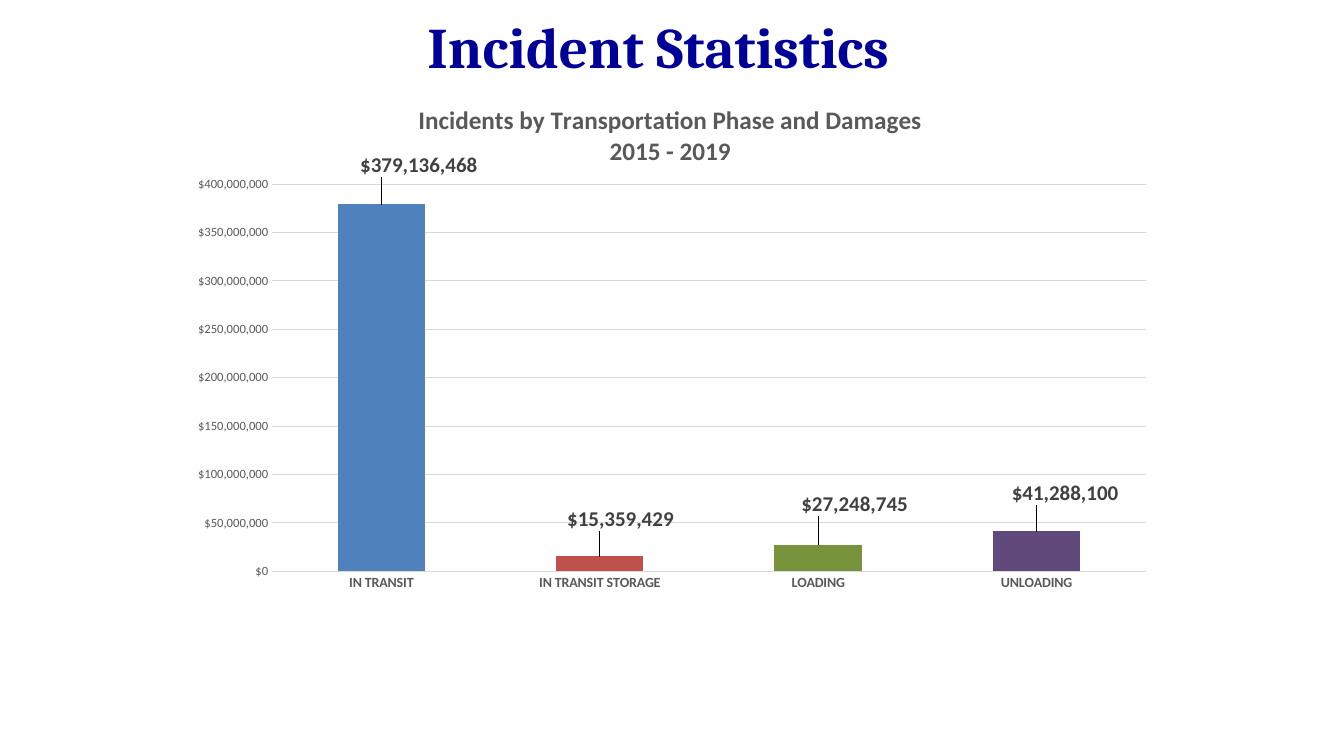
"""Build the incident statistics slide with its damages column chart."""
import pptx
import pptx.chart.data
import pptx.dml.color
import pptx.enum.chart
import pptx.enum.text
import pptx.oxml
import pptx.oxml.ns
import pptx.util

COLORS = {"heading": "000099", "muted": "595959", "label": "404040", "grid": "D9D9D9"}
DOLLARS = '"$"#,##0'
PHASES = [
    ("IN TRANSIT", 379136468, "4F81BD", 0.038, -0.044),
    ("IN TRANSIT STORAGE", 15359429, "C0504D", 0.021, -0.04),
    ("LOADING", 27248745, "77933C", 0.037, -0.046),
    ("UNLOADING", 41288100, "604A7B", 0.029, -0.042),
]


def write(frame, text, font="Calibri", size=18, color="muted"):
    for number, line in enumerate(text.split("\n")):
        paragraph = frame.add_paragraph() if number else frame.paragraphs[0]
        paragraph.alignment = pptx.enum.text.PP_ALIGN.CENTER
        run = paragraph.add_run()
        run.text = line
        run.font.name, run.font.size, run.font.bold = font, pptx.util.Pt(size), True
        run.font.color.rgb = pptx.dml.color.RGBColor.from_string(COLORS[color])


def place(part, index, **settings):
    for old in part.findall(pptx.oxml.ns.qn("c:layout")):
        part.remove(old)
    values = "".join(f'<c:{key} val="{value}"/>' for key, value in settings.items())
    part.insert(index, pptx.oxml.parse_xml(
        f'<c:layout {pptx.oxml.ns.nsdecls("c")}><c:manualLayout>{values}</c:manualLayout></c:layout>'))


presentation = pptx.Presentation()
presentation.slide_width = pptx.util.Inches(13.33)
presentation.slide_height = pptx.util.Inches(7.5)
slide = presentation.slides.add_slide(presentation.slide_layouts[6])

heading_area = [pptx.util.Inches(length) for length in (2.03, 0.11, 9, 1.25)]
heading = slide.shapes.add_textbox(*heading_area).text_frame
heading.word_wrap = True
heading.margin_top = 0
heading.vertical_anchor = pptx.enum.text.MSO_ANCHOR.TOP
write(heading, "Incident Statistics", font="Cambria", size=41, color="heading")

damages = pptx.chart.data.CategoryChartData(number_format=DOLLARS)
damages.categories = [phase[0] for phase in PHASES]
damages.add_series("Series 1", [phase[1] for phase in PHASES])
chart_area = [pptx.util.Inches(length) for length in (1.77, 0.79, 9.79, 5.19)]
chart = slide.shapes.add_chart(
    pptx.enum.chart.XL_CHART_TYPE.COLUMN_CLUSTERED, *chart_area, damages).chart
chart.font.name, chart.font.size = "Calibri", pptx.util.Pt(10)
chart.has_legend = False
chart.has_title = True
write(chart.chart_title.text_frame, "Incidents by Transportation Phase and Damages\n2015 - 2019")

for axis, size, bold in ((chart.category_axis, 10, True), (chart.value_axis, 9, False)):
    axis.major_tick_mark = pptx.enum.chart.XL_TICK_MARK.NONE
    axis.minor_tick_mark = pptx.enum.chart.XL_TICK_MARK.NONE
    axis.format.line.fill.background()
    font = axis.tick_labels.font
    font.name, font.size, font.bold = "Calibri", pptx.util.Pt(size), bold
    font.color.rgb = pptx.dml.color.RGBColor.from_string(COLORS["muted"])

scale = chart.value_axis
scale.minimum_scale, scale.maximum_scale, scale.major_unit = 0, 400_000_000, 50_000_000
scale.tick_labels.number_format = DOLLARS
scale.tick_labels.number_format_is_linked = False
scale.has_major_gridlines = True
gridline = scale.major_gridlines.format.line
gridline.width = pptx.util.Pt(0.75)
gridline.color.rgb = pptx.dml.color.RGBColor.from_string(COLORS["grid"])

plot = chart.plots[0]
plot.gap_width = 150
plot.vary_by_categories = False
series = plot.series[0]
series.format.fill.solid()
series.format.fill.fore_color.rgb = pptx.dml.color.RGBColor.from_string(PHASES[0][2])
amounts = series.data_labels
amounts.show_value = True
amounts.number_format = DOLLARS
amounts.number_format_is_linked = False
for number, (_, _, color, _, _) in enumerate(PHASES):
    point = series.points[number]
    point.format.fill.solid()
    point.format.fill.fore_color.rgb = pptx.dml.color.RGBColor.from_string(color)
    point.data_label.position = pptx.enum.chart.XL_LABEL_POSITION.OUTSIDE_END
for labels in [amounts] + [series.points[number].data_label for number in range(len(PHASES))]:
    labels.font.name, labels.font.size, labels.font.bold = "Calibri", pptx.util.Pt(15), True
    labels.font.color.rgb = pptx.dml.color.RGBColor.from_string(COLORS["label"])

chart_xml = chart.element if hasattr(chart, "element") else chart._chartSpace
place(chart_xml.xpath(".//c:title")[0], 1, xMode="edge", yMode="edge", x=0.24, y=0.04)
place(chart_xml.xpath(".//c:plotArea")[0], 0, layoutTarget="inner", xMode="edge",
      yMode="edge", x=0.095, y=0.2, w=0.885, h=0.74)
for amount, (_, _, _, right, down) in zip(chart_xml.xpath(".//c:dLbl"), PHASES):
    place(amount, 1, x=right, y=down)

presentation.save("out.pptx")
